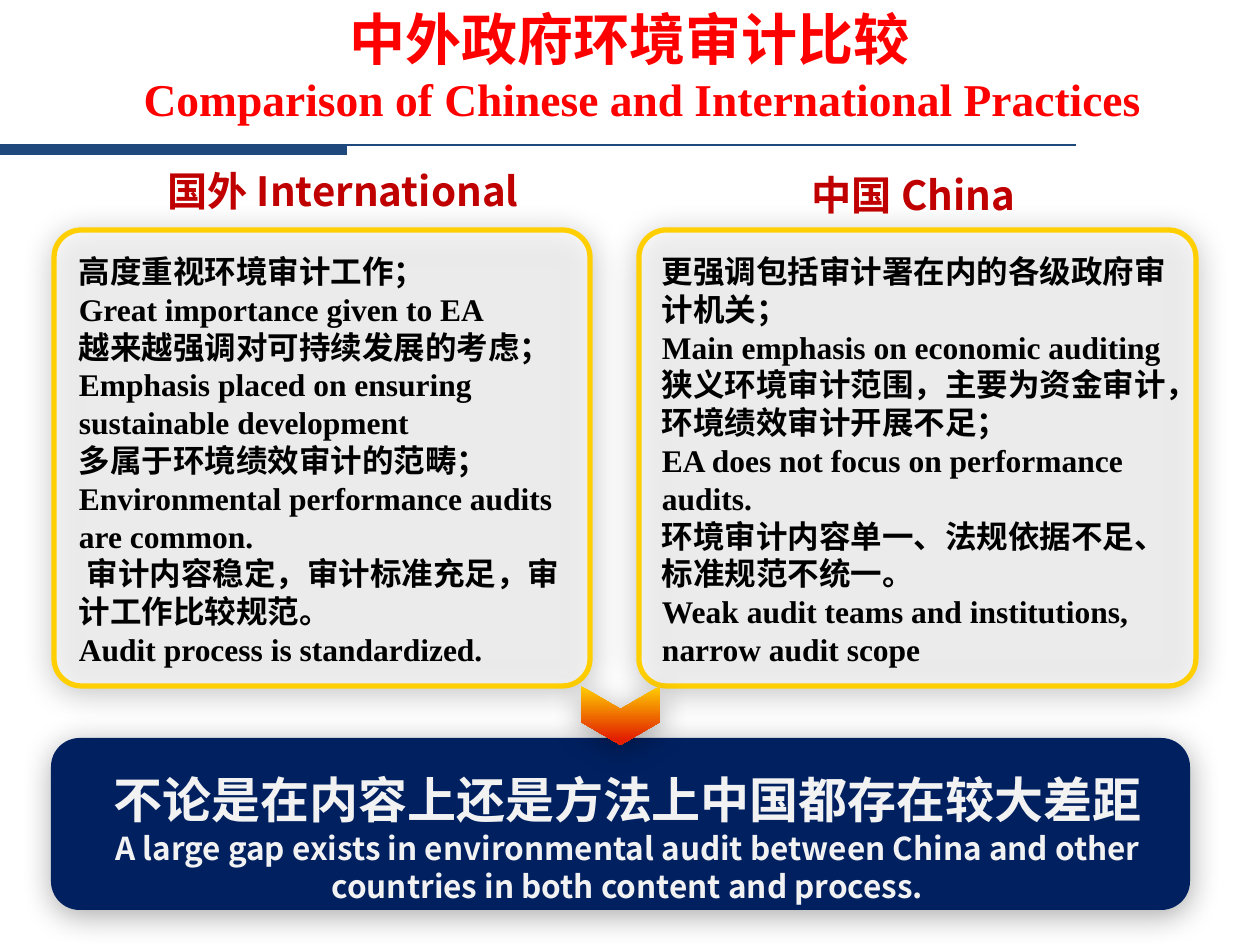
from lxml.etree import SubElement
from pptx import Presentation
from pptx.dml.color import RGBColor
from pptx.enum.shapes import MSO_CONNECTOR as Connector, MSO_SHAPE as Shape
from pptx.enum.text import MSO_ANCHOR as Anchor, MSO_AUTO_SIZE as AutoSize, PP_ALIGN as Align
from pptx.oxml.ns import qn
from pptx.util import Pt

PX = 914400 / 126
SANS, SERIF = "Noto Sans CJK SC", "Times New Roman"
YELLOW, RED, NAVY, BLUE = "FFCF01", "E22000", "002060", "1F497D"
LINE_RATIO = 1.2

INTERNATIONAL = [
    "高度重视环境审计工作；",
    "Great importance given to EA",
    "越来越强调对可持续发展的考虑；",
    "Emphasis placed on ensuring sustainable development",
    "多属于环境绩效审计的范畴；",
    "Environmental performance audits are common.",
    "审计内容稳定，审计标准充足，审计工作比较规范。",
    "Audit process is standardized.",
]
CHINA = [
    "更强调包括审计署在内的各级政府审计机关；",
    "Main emphasis on economic auditing",
    "狭义环境审计范围，主要为资金审计，环境绩效审计开展不足；",
    "EA does not focus on performance audits.",
    "环境审计内容单一、法规依据不足、标准规范不统一。",
    "Weak audit teams and institutions, narrow audit scope",
]


def px(value):
    """Turn px into EMU."""
    return round(value * PX)


def color(value):
    """Turn a hex string into a colour."""
    return RGBColor.from_string(value)


def place(shape, box):
    """Move and size a shape to a px box."""
    shape.left, shape.top, shape.width, shape.height = map(px, box)


def set_indent(paragraph, indent=0):
    """Remove the bullet and set the first-line indent."""
    properties = paragraph._p.get_or_add_pPr()
    properties.set("marL", "0")
    properties.set("indent", str(px(indent)))
    if properties.find(qn("a:buNone")) is None:
        SubElement(properties, qn("a:buNone"))


def write(shape, lines, text_color, align=Align.LEFT, anchor=Anchor.TOP, inset=(13, 6)):
    """Fill a shape with bold lines given as (text, size, font, line spacing)."""
    frame = shape.text_frame
    frame.word_wrap = True
    frame.auto_size = AutoSize.NONE
    frame.vertical_anchor = anchor
    frame.margin_left = frame.margin_right = px(inset[0])
    frame.margin_top = frame.margin_bottom = px(inset[1])
    for number, (text, size, name, spacing) in enumerate(lines):
        paragraph = frame.add_paragraph() if number else frame.paragraphs[0]
        paragraph.text = text
        paragraph.alignment = align
        paragraph.line_spacing = spacing
        paragraph.space_before = Pt(0)
        set_indent(paragraph)
        font = paragraph.font
        font.size, font.bold, font.name = Pt(size), True, name
        font.color.rgb = color(text_color)
        defaults = paragraph._p.pPr.find(qn("a:defRPr"))
        SubElement(defaults, qn("a:ea"), typeface=SANS)
    return frame.paragraphs


def fixed(text, size, name):
    """Describe a line with exact spacing."""
    return text, size, name, Pt(size * LINE_RATIO)


def add_placeholder_text(slide, index, box, lines, text_color, **options):
    """Place a placeholder in front of the shapes and fill it."""
    shape = slide.placeholders[index]
    slide.shapes._spTree.append(shape._element)
    place(shape, box)
    return write(shape, lines, text_color, **options)


def add_header(slide, index, box, text):
    """Write a column header."""
    add_placeholder_text(slide, index, box, [(text, 23, SANS, 1.0)], "C00000",
                         align=Align.CENTER, anchor=Anchor.MIDDLE, inset=(11, 5))


def add_points(slide, index, box, points):
    """Write a column of alternating Chinese and English points."""
    lines = [fixed(text, 18, SERIF if text.isascii() else SANS) for text in points]
    return add_placeholder_text(slide, index, box, lines, "000000")


def add_block(slide, kind, box, fill=None, line=None, shadow=True):
    """Add a preset shape with optional solid fill, outline and soft shadow."""
    shape = slide.shapes.add_shape(kind, *map(px, box))
    if fill:
        shape.fill.solid()
        shape.fill.fore_color.rgb = color(fill)
    if line:
        shape.line.color.rgb = color(line)
        shape.line.width = Pt(3)
    else:
        shape.line.fill.background()
    shape.shadow.inherit = False
    if shadow:
        effects = shape._element.spPr.find(qn("a:effectLst"))
        outer = SubElement(effects, qn("a:outerShdw"), blurRad=str(Pt(17.8)),
                           dist=str(Pt(3)), dir="5220000", rotWithShape="0")
        shade = SubElement(outer, qn("a:srgbClr"), val="000000")
        SubElement(shade, qn("a:alpha"), val="33000")
    return shape


def add_panel(slide, box):
    """Add a translucent rounded panel."""
    panel = add_block(slide, Shape.ROUNDED_RECTANGLE, box, "FFFFFF", YELLOW)
    panel.adjustments[0] = 0.06
    fill = panel._element.spPr.find(qn("a:solidFill"))
    SubElement(fill[0], qn("a:alpha"), val="60000")


def add_rule(slide):
    """Add the thin line and thick bar below the title."""
    line = slide.shapes.add_connector(Connector.STRAIGHT, 0, px(145), px(1076), px(145))
    line.line.color.rgb = color(BLUE)
    line.line.width = Pt(1.5)
    SubElement(line._element.spPr, qn("a:effectLst"))
    add_block(slide, Shape.RECTANGLE, (0, 145, 347, 10), BLUE, shadow=False)


def add_conclusion(slide):
    """Add the conclusion banner and its text."""
    add_block(slide, Shape.ROUNDED_RECTANGLE, (51, 738, 1139, 172), NAVY)
    box = slide.shapes.add_textbox(*map(px, (63, 764, 1129, 149)))
    write(box, [
        fixed("不论是在内容上还是方法上中国都存在较大差距", 28, SANS),
        fixed("A large gap exists in environmental audit between China and other "
              "countries in both content and process.", 18, SANS),
    ], "F2F2F2", align=Align.CENTER)


def add_arrow(slide):
    """Add the downward chevron with its gradient."""
    arrow = add_block(slide, Shape.CHEVRON, (591, 676, 59, 79))
    arrow.rotation = 90
    arrow.adjustments[0] = 0.39
    arrow.fill.gradient()
    arrow.fill.gradient_angle = 0
    for stop, position, value in zip(arrow.fill.gradient_stops, (0, 0.9), (YELLOW, RED)):
        stop.position = position
        stop.color.rgb = color(value)


def main():
    """Build the comparison slide."""
    presentation = Presentation()
    presentation.slide_width, presentation.slide_height = px(1260), px(945)
    slide = presentation.slides.add_slide(presentation.slide_layouts[4])
    add_rule(slide)
    add_panel(slide, (54, 230, 536, 456))
    add_panel(slide, (639, 230, 557, 456))
    add_conclusion(slide)
    add_arrow(slide)
    title = add_placeholder_text(slide, 0, (0, 4, 1260, 157), [
        ("中外政府环境审计比较", 32, SERIF, 1.0),
        ("Comparison of Chinese and International Practices", 26, SERIF, 1.0),
    ], "FF0000", align=Align.CENTER, inset=(0, 0))
    set_indent(title[1], 26)
    add_header(slide, 1, (105, 160, 476, 60), "国外 International")
    add_header(slide, 3, (730, 164, 367, 60), "中国 China")
    points = add_points(slide, 2, (66, 246, 514, 432), INTERNATIONAL)
    set_indent(points[6], 8)
    add_points(slide, 4, (649, 246, 536, 432), CHINA)
    presentation.save("out.pptx")


if __name__ == "__main__":
    main()
